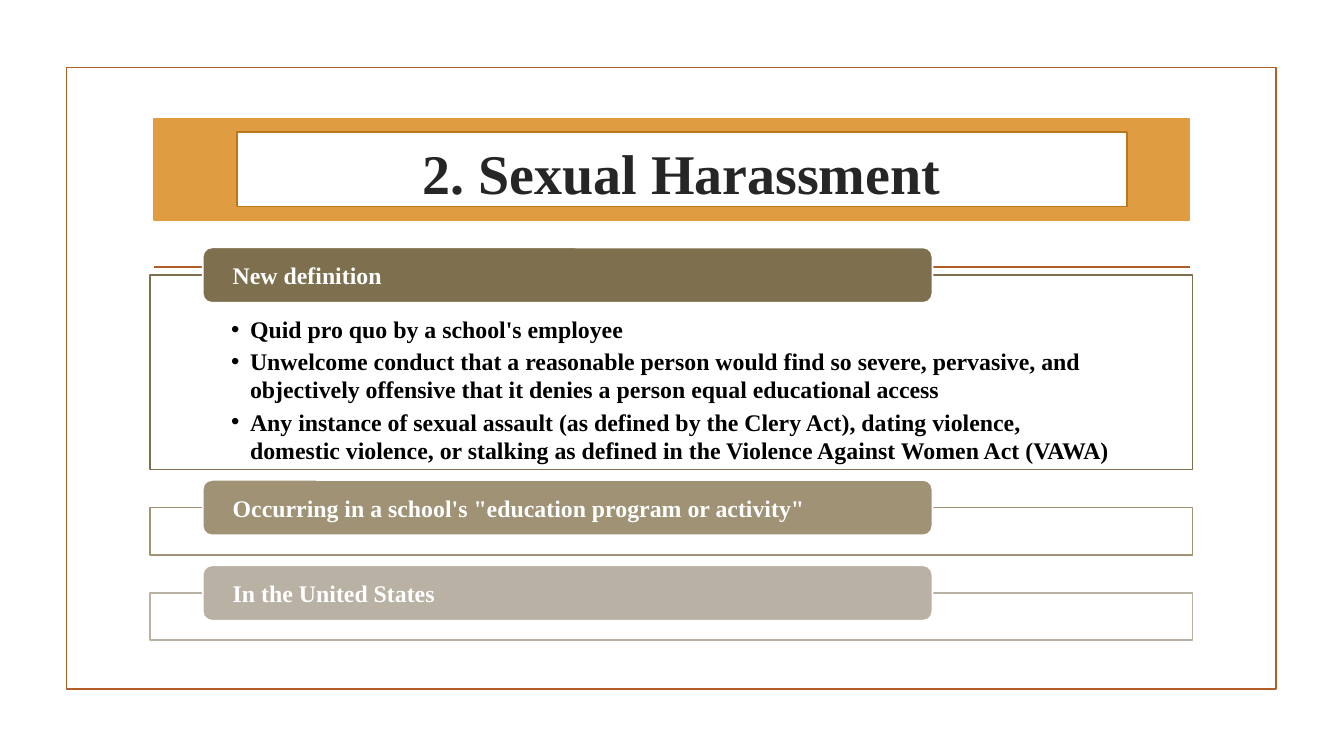
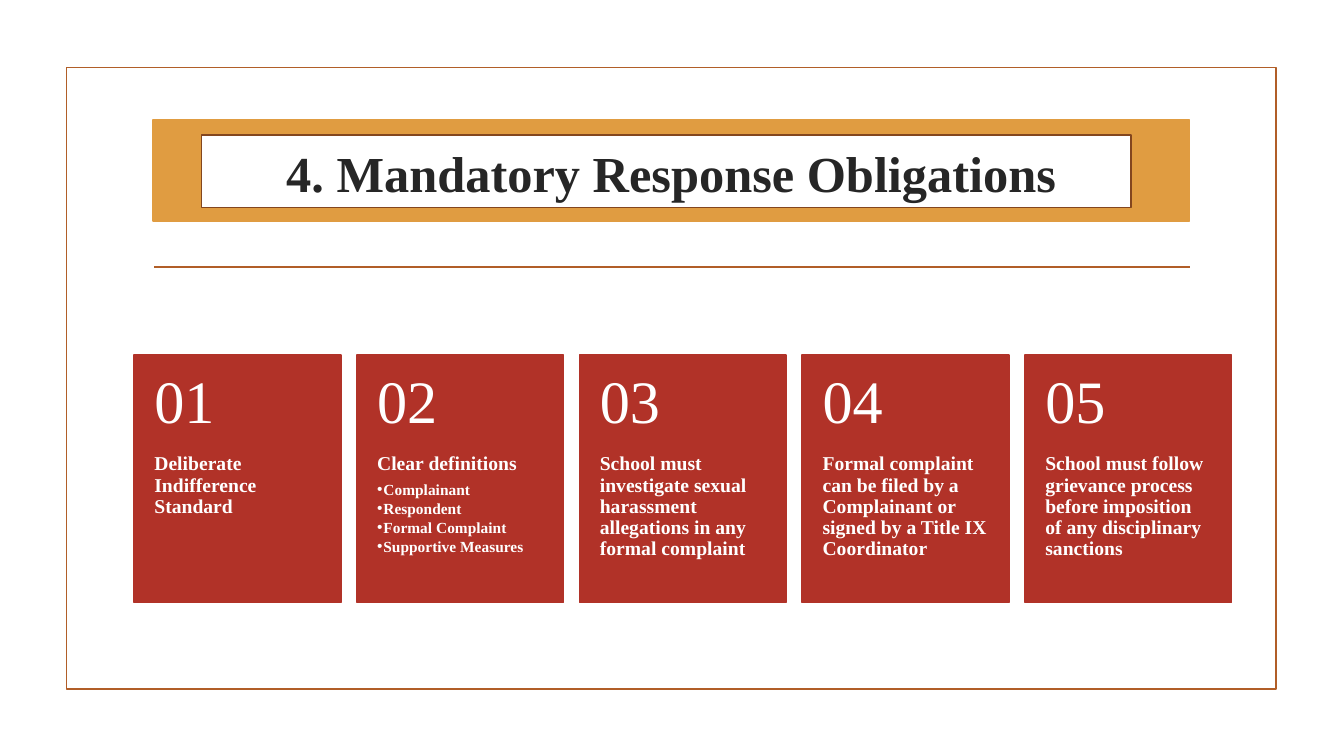
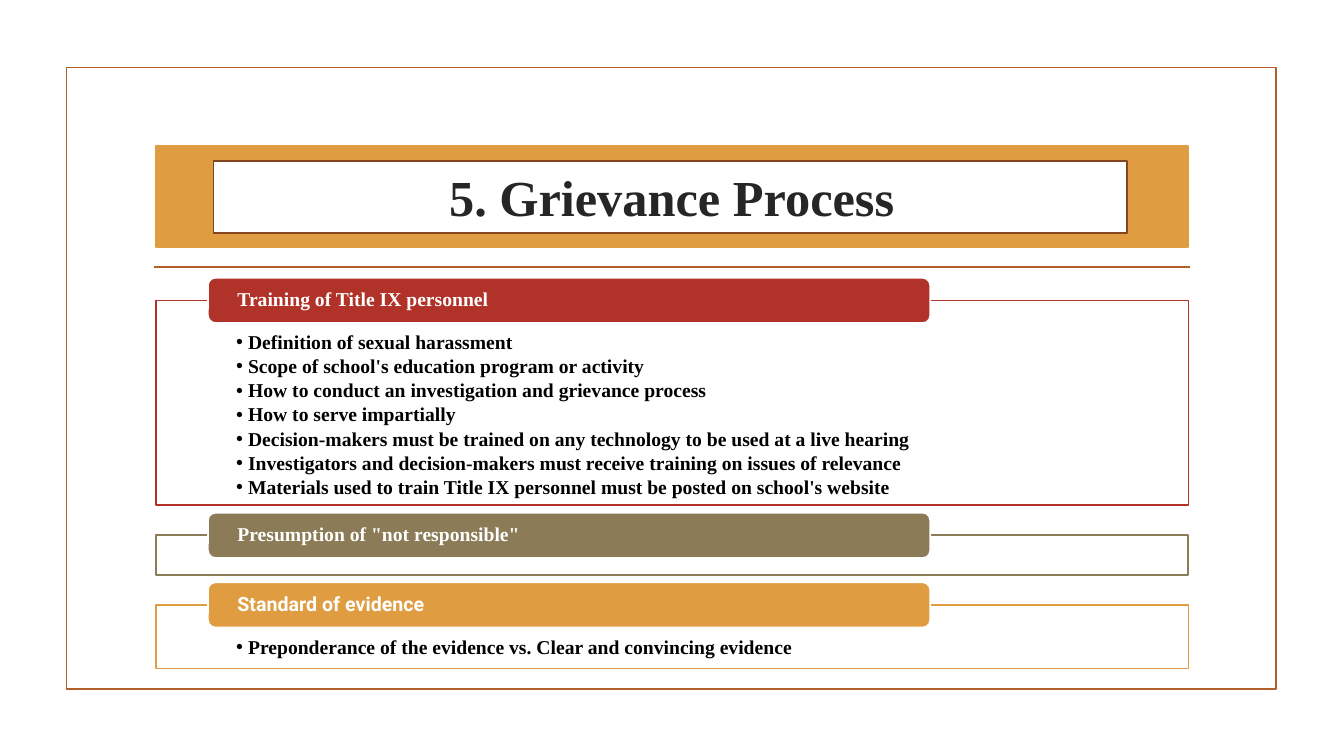
import dataclasses
import typing

import lxml.etree
import pptx
import pptx.dml.color
import pptx.enum.shapes
import pptx.enum.text
import pptx.oxml.ns
import pptx.util

Pt = pptx.util.Pt
Shapes = pptx.enum.shapes.MSO_SHAPE
Align = pptx.enum.text.PP_ALIGN
Anchor = pptx.enum.text.MSO_ANCHOR
qn = pptx.oxml.ns.qn

SERIF = "Times New Roman"
WHITE, BLACK, TITLE_INK = "FFFFFF", "000000", "262626"
RUST, BROWN, OCHRE, AMBER, RED = "B15E28", "83461E", "BA781E", "E09C41", "B13228"
OUTLINE_WIDTH = 1.25
LAYOUT_BY_LIST_COUNT = {0: 5, 1: 1, 2: 3}


class Box(typing.NamedTuple):
    left: float
    top: float
    width: float
    height: float


class Insets(typing.NamedTuple):
    left: float = 7.2
    top: float = 3.6
    right: float = 7.2
    bottom: float = 3.6


@dataclasses.dataclass(frozen=True)
class TextStyle:
    size: float
    color: str = WHITE
    font: str = SERIF
    bold: bool = True
    alignment: Align = Align.LEFT
    line_spacing: float = 1.0
    space_after: float = 0
    bullet_indent: float = 0


@dataclasses.dataclass(frozen=True)
class Header:
    title: str
    size: float
    band: Box
    plate: Box
    title_box: Box
    plate_line: str = BROWN


@dataclasses.dataclass(frozen=True)
class Panel:
    heading: str
    color: str
    height: float
    bullets: tuple[str, ...] = ()
    font: str = SERIF


@dataclasses.dataclass(frozen=True)
class PanelStack:
    left: float
    top: float
    width: float
    gap: float
    tab_left: float
    tab_width: float
    tab_height: float
    insets: Insets
    heading_style: TextStyle
    bullet_style: TextStyle


@dataclasses.dataclass(frozen=True)
class Card:
    text: str
    bullets: tuple[str, ...] = ()


Line = tuple[str, TextStyle]


def rgb(color: str) -> pptx.dml.color.RGBColor:
    return pptx.dml.color.RGBColor.from_string(color)


def in_points(values: typing.Iterable[float]) -> list[int]:
    return [Pt(value) for value in values]


def paint(shape, fill: str | None, line: str, opacity: int = 100) -> None:
    if fill is None:
        shape.fill.background()
    else:
        shape.fill.solid()
        shape.fill.fore_color.rgb = rgb(fill)
        if opacity < 100:
            color = shape.element.spPr.find(f"{qn('a:solidFill')}/{qn('a:srgbClr')}")
            lxml.etree.SubElement(color, qn("a:alpha"), val=str(opacity * 1000))
    shape.line.color.rgb = rgb(line)
    shape.line.width = Pt(OUTLINE_WIDTH)


def add_block(slide, kind: Shapes, box: Box, fill: str | None, line: str, opacity: int = 100):
    shape = slide.shapes.add_shape(kind, *in_points(box))
    shape.shadow.inherit = False
    paint(shape, fill, line, opacity)
    return shape


def place(slide, shape, box: Box) -> None:
    shape.left, shape.top, shape.width, shape.height = in_points(box)
    slide.shapes.element.append(shape.element)


def add_bullet(paragraph, indent: float) -> None:
    properties = paragraph._p.get_or_add_pPr()
    properties.set("marL", str(Pt(indent)))
    properties.set("indent", str(-Pt(indent)))
    lxml.etree.SubElement(properties, qn("a:buFont"), typeface="Arial")
    lxml.etree.SubElement(properties, qn("a:buChar"), char="•")


def write(shape, lines: list[Line], insets: Insets, anchor: Anchor) -> None:
    frame = shape.text_frame
    frame.word_wrap = True
    frame.auto_size = pptx.enum.text.MSO_AUTO_SIZE.NONE
    frame.vertical_anchor = anchor
    frame.margin_left, frame.margin_top, frame.margin_right, frame.margin_bottom = in_points(insets)
    for number, (text, style) in enumerate(lines):
        paragraph = frame.add_paragraph() if number else frame.paragraphs[0]
        paragraph.text = text
        if style.bullet_indent:
            add_bullet(paragraph, style.bullet_indent)
        paragraph.alignment = style.alignment
        paragraph.line_spacing = style.line_spacing
        paragraph.space_before = Pt(0)
        paragraph.space_after = Pt(style.space_after)
        paragraph.font.name = style.font
        paragraph.font.size = Pt(style.size)
        paragraph.font.bold = style.bold
        paragraph.font.color.rgb = rgb(style.color)


def decorate_master(presentation, slide) -> None:
    frame = add_block(slide, Shapes.RECTANGLE, Box(47.5, 48.2, 864, 444.2), None, RUST)
    rule = slide.shapes.add_connector(
        pptx.enum.shapes.MSO_CONNECTOR.STRAIGHT, *in_points((110.2, 190.8, 850.3, 190.8))
    )
    rule.line.color.rgb = rgb(RUST)
    rule.line.width = Pt(OUTLINE_WIDTH)
    lxml.etree.SubElement(rule.element.spPr, qn("a:effectLst"))
    for identifier, shape in enumerate((frame, rule), start=101):
        shape.element.xpath("./*/p:cNvPr")[0].set("id", str(identifier))
        presentation.slide_master.shapes.element.append(shape.element)


def add_slide(presentation, header: Header, list_count: int = 0):
    slide = presentation.slides.add_slide(
        presentation.slide_layouts[LAYOUT_BY_LIST_COUNT[list_count]]
    )
    add_block(slide, Shapes.RECTANGLE, header.band, AMBER, AMBER)
    add_block(slide, Shapes.RECTANGLE, header.plate, WHITE, header.plate_line)
    title = slide.shapes.title
    place(slide, title, header.title_box)
    style = TextStyle(header.size, TITLE_INK, alignment=Align.CENTER)
    write(title, [(header.title, style)], Insets(), Anchor.MIDDLE)
    return slide


def add_panels(slide, stack: PanelStack, panels: list[Panel]) -> None:
    bodies = iter([holder for holder in slide.placeholders if holder.placeholder_format.idx])
    top = stack.top
    for panel in panels:
        box = Box(stack.left, top, stack.width, panel.height)
        if panel.bullets:
            body = next(bodies)
            place(slide, body, box)
            paint(body, WHITE, panel.color, opacity=90)
            lines = [(text, stack.bullet_style) for text in panel.bullets]
            write(body, lines, stack.insets, Anchor.TOP)
        else:
            add_block(slide, Shapes.RECTANGLE, box, WHITE, panel.color, opacity=90)
        tab_box = Box(stack.tab_left, top - stack.tab_height / 2, stack.tab_width, stack.tab_height)
        tab = add_block(slide, Shapes.ROUNDED_RECTANGLE, tab_box, panel.color, WHITE)
        style = dataclasses.replace(stack.heading_style, font=panel.font)
        write(tab, [(panel.heading, style)], Insets(19.5, 0, 19.5, 0), Anchor.MIDDLE)
        top += panel.height + stack.gap


def add_cards(slide, cards: list[Card]) -> None:
    left, top, width, height, pitch, number_height = 95.75, 253.5, 147.6, 176.8, 159.1, 70.8
    number_style = TextStyle(43, bold=False, line_spacing=0.9)
    text_style = TextStyle(14, line_spacing=0.9, space_after=4.9)
    bullet_style = TextStyle(11, line_spacing=0.9, space_after=1.65, bullet_indent=4.5)
    for index, card in enumerate(cards):
        box = Box(left + index * pitch, top, width, height)
        block = add_block(slide, Shapes.RECTANGLE, box, RED, RED)
        lines = [(card.text, text_style)] + [(text, bullet_style) for text in card.bullets]
        write(block, lines, Insets(14.5, number_height, 14.5, 26), Anchor.TOP)
        number = slide.shapes.add_textbox(*in_points(box._replace(height=number_height)))
        write(number, [(f"{index + 1:02}", number_style)], Insets(14.5, 13, 14.5, 13), Anchor.MIDDLE)


HARASSMENT_HEADER = Header(
    "2. Sexual Harassment", 40,
    band=Box(110.2, 85, 739.5, 72),
    plate=Box(169.2, 94.3, 635.8, 53.3),
    title_box=Box(72.7, 70.6, 828, 104.4),
    plate_line=OCHRE,
)
HARASSMENT_STACK = PanelStack(
    left=107.3, top=196.5, width=744.5, gap=27.2,
    tab_left=144.8, tab_width=521.2, tab_height=39.6,
    insets=Insets(57.8, 28.1, 57.8, 9.4),
    heading_style=TextStyle(17),
    bullet_style=TextStyle(17, BLACK, space_after=2.55, bullet_indent=13.5),
)
HARASSMENT_PANELS = [
    Panel("New definition", "7E704E", 138.9, (
        "Quid pro quo by a school's employee",
        "Unwelcome conduct that a reasonable person would find so severe, pervasive, and "
        "objectively offensive that it denies a person equal educational access",
        "Any instance of sexual assault (as defined by the Clery Act), dating violence, "
        "domestic violence, or stalking as defined in the Violence Against Women Act (VAWA)",
    )),
    Panel("Occurring in a school's \"education program or activity\"", "9F9275", 33.8),
    Panel("In the United States", "B9B2A4", 33.8),
]

RESPONSE_HEADER = Header(
    "4. Mandatory Response Obligations", 36,
    band=Box(109.5, 85.7, 740.2, 72),
    plate=Box(144, 96.5, 663.8, 51.8),
    title_box=Box(172, 96.5, 615, 53.3),
)
RESPONSE_CARDS = [
    Card("Deliberate Indifference Standard"),
    Card("Clear definitions",
         ("Complainant", "Respondent", "Formal Complaint", "Supportive Measures")),
    Card("School must investigate sexual harassment allegations in any formal complaint"),
    Card("Formal complaint can be filed by a Complainant or signed by a Title IX Coordinator"),
    Card("School must follow grievance process before imposition of any disciplinary sanctions"),
]

GRIEVANCE_HEADER = Header(
    "5. Grievance Process", 36,
    band=Box(111.6, 104.4, 737.3, 72),
    plate=Box(152.6, 115.2, 652.3, 51.1),
    title_box=Box(302.4, 118, 355, 44.6),
)
GRIEVANCE_STACK = PanelStack(
    left=111.6, top=214.6, width=737.3, gap=21.6,
    tab_left=148.5, tab_width=516, tab_height=32.4,
    insets=Insets(57, 23, 57, 8),
    heading_style=TextStyle(14, line_spacing=0.9),
    bullet_style=TextStyle(14, BLACK, line_spacing=0.9, space_after=2.1, bullet_indent=8.6),
)
GRIEVANCE_PANELS = [
    Panel("Training of Title IX personnel", RED, 146.2, (
        "Definition of sexual harassment",
        "Scope of school's education program or activity",
        "How to conduct an investigation and grievance process",
        "How to serve impartially",
        "Decision-makers must be trained on any technology to be used at a live hearing",
        "Investigators and decision-makers must receive training on issues of relevance",
        "Materials used to train Title IX personnel must be posted on school's website",
    )),
    Panel("Presumption of \"not responsible\"", "8B7B56", 28.1),
    Panel("Standard of evidence", AMBER, 45.4,
          ("Preponderance of the evidence vs. Clear and convincing evidence",), font="Roboto"),
]


def main() -> None:
    presentation = pptx.Presentation()
    presentation.slide_width, presentation.slide_height = Pt(960), Pt(540)

    harassment = add_slide(presentation, HARASSMENT_HEADER, list_count=1)
    decorate_master(presentation, harassment)
    add_panels(harassment, HARASSMENT_STACK, HARASSMENT_PANELS)

    add_cards(add_slide(presentation, RESPONSE_HEADER), RESPONSE_CARDS)

    grievance = add_slide(presentation, GRIEVANCE_HEADER, list_count=2)
    add_panels(grievance, GRIEVANCE_STACK, GRIEVANCE_PANELS)

    presentation.save("out.pptx")


if __name__ == "__main__":
    main()
